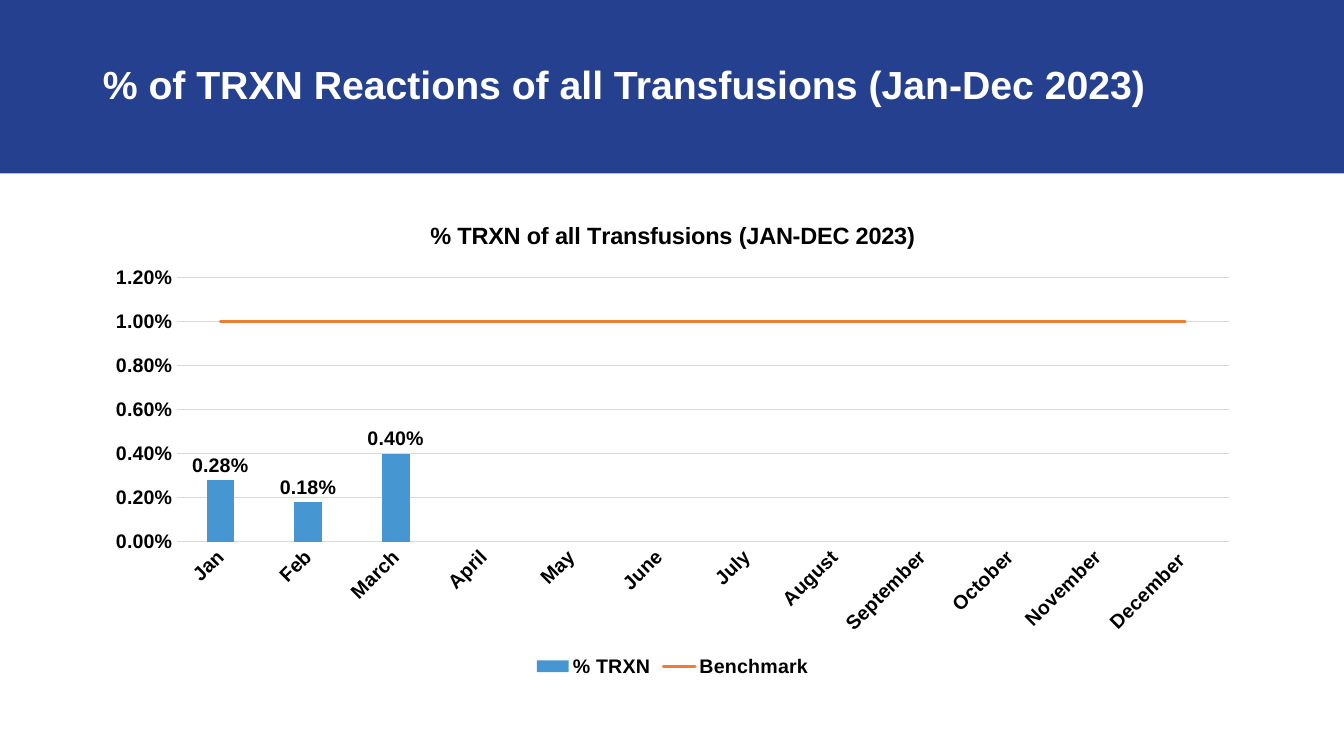
from dataclasses import dataclass

from lxml import etree
from pptx import Presentation
from pptx.chart.data import CategoryChartData
from pptx.dml.color import RGBColor
from pptx.enum.chart import XL_CHART_TYPE, XL_LABEL_POSITION, XL_LEGEND_POSITION, XL_TICK_MARK
from pptx.enum.shapes import MSO_SHAPE
from pptx.enum.text import MSO_ANCHOR, PP_ALIGN
from pptx.oxml import parse_xml
from pptx.oxml.ns import nsdecls, qn
from pptx.util import Inches, Pt

TITLE = "% of TRXN Reactions of all Transfusions (Jan-Dec 2023)"
CHART_TITLE = "% TRXN of all Transfusions (JAN-DEC 2023)"
MONTHS = ["Jan", "Feb", "March", "April", "May", "June", "July", "August",
          "September", "October", "November", "December "]
REACTIONS = [0.0028, 0.0018, 0.004] + [None] * 9
BENCHMARK = [0.01] * len(MONTHS)
PERCENT = "0.00%"

SLIDE_W, SLIDE_H = 13.33, 7.5
BAND_H = 1.72
TITLE_BOX = (0.92, 0.14, 11.5, 1.45)
CHART_BOX = (0.92, 2, 11.5, 4.76)


@dataclass(frozen=True)
class Theme:
    band: RGBColor = RGBColor(0x25, 0x40, 0x8F)
    white: RGBColor = RGBColor(0xFF, 0xFF, 0xFF)
    text: RGBColor = RGBColor(0, 0, 0)
    bar: RGBColor = RGBColor(0x46, 0x96, 0xD2)
    benchmark: RGBColor = RGBColor(0xED, 0x7D, 0x31)
    grid: RGBColor = RGBColor(0xD9, 0xD9, 0xD9)
    font: str = "Arial"
    title_size: float = 28
    chart_title_size: float = 16.8
    chart_size: float = 14


THEME = Theme()


def set_font(font, size, color):
    for name, value in {"name": THEME.font, "size": Pt(size), "bold": True}.items():
        setattr(font, name, value)
    font.color.rgb = color


def set_line(line, color, width):
    line.color.rgb = color
    line.width = Pt(width)


def add_header(slide):
    title = slide.shapes.title
    band = slide.shapes.add_shape(MSO_SHAPE.RECTANGLE, 0, 0, Inches(SLIDE_W), Inches(BAND_H))
    band.shadow.inherit = False
    band.fill.solid()
    band.fill.fore_color.rgb = THEME.band
    band.line.fill.background()
    title._element.addprevious(band._element)

    for side, value in zip(("left", "top", "width", "height"), TITLE_BOX):
        setattr(title, side, Inches(value))
    tf = title.text_frame
    tf.text = TITLE
    tf.word_wrap = True
    tf.vertical_anchor = MSO_ANCHOR.MIDDLE
    p = tf.paragraphs[0]
    p.alignment = PP_ALIGN.LEFT
    p.line_spacing = 0.9
    set_font(p.runs[0].font, THEME.title_size, THEME.white)


def move_to_line_plot(bar_plot, series):
    """Draw one series of a column plot as a line on the same axes."""
    bar_chart, ser = bar_plot._element, series._element
    line_chart = parse_xml(
        f'<c:lineChart {nsdecls("c")}><c:grouping val="standard"/>'
        '<c:varyColors val="0"/><c:marker val="1"/></c:lineChart>')
    marker = parse_xml(f'<c:marker {nsdecls("c")}><c:symbol val="none"/></c:marker>')
    for bar_only in ser.findall(qn("c:invertIfNegative")):
        ser.remove(bar_only)
    ser.find(qn("c:spPr")).addnext(marker)
    etree.SubElement(ser, qn("c:smooth")).set("val", "0")
    ser.find(".//" + qn("a:ln")).set("cap", "rnd")
    line_chart.find(qn("c:marker")).addprevious(ser)
    for axis_id in bar_chart.findall(qn("c:axId")):
        etree.SubElement(line_chart, qn("c:axId")).set("val", axis_id.get("val"))
    bar_chart.addnext(line_chart)


def format_axes(chart):
    cat, val = chart.category_axis, chart.value_axis
    for axis in (cat, val):
        axis.major_tick_mark = axis.minor_tick_mark = XL_TICK_MARK.NONE
        set_font(axis.tick_labels.font, THEME.chart_size, THEME.text)
    set_line(cat.format.line, THEME.grid, 0.75)
    cat._element.find(qn("c:txPr")).find(qn("a:bodyPr")).set("rot", str(-45 * 60000))
    for name, value in {"minimum_scale": 0, "maximum_scale": 0.012, "major_unit": 0.002}.items():
        setattr(val, name, value)
    val.format.line.fill.background()
    set_line(val.major_gridlines.format.line, THEME.grid, 0.75)
    val.tick_labels.number_format = PERCENT
    val.tick_labels.number_format_is_linked = False


def add_reaction_chart(slide):
    data = CategoryChartData(number_format=PERCENT)
    data.categories = MONTHS
    data.add_series("% TRXN", REACTIONS)
    data.add_series("Benchmark", BENCHMARK)
    chart = slide.shapes.add_chart(
        XL_CHART_TYPE.COLUMN_CLUSTERED, *map(Inches, CHART_BOX), data).chart
    set_font(chart.font, THEME.chart_size, THEME.text)

    chart.has_title = True
    tf = chart.chart_title.text_frame
    tf.text = CHART_TITLE
    set_font(tf.paragraphs[0].runs[0].font, THEME.chart_title_size, THEME.text)
    chart.chart_title.include_in_layout = False

    chart.has_legend = True
    chart.legend.position = XL_LEGEND_POSITION.BOTTOM
    chart.legend.include_in_layout = False
    set_font(chart.legend.font, THEME.chart_size, THEME.text)
    format_axes(chart)

    plot = chart.plots[0]
    for name, value in {"gap_width": 219, "overlap": -27, "vary_by_categories": False}.items():
        setattr(plot, name, value)
    reactions, benchmark = plot.series
    reactions.format.fill.solid()
    reactions.format.fill.fore_color.rgb = THEME.bar
    labels = reactions.data_labels
    for name, value in {"show_value": True, "position": XL_LABEL_POSITION.OUTSIDE_END,
                        "number_format": PERCENT, "number_format_is_linked": False}.items():
        setattr(labels, name, value)
    set_font(labels.font, THEME.chart_size, THEME.text)
    set_line(benchmark.format.line, THEME.benchmark, 2.25)
    move_to_line_plot(plot, benchmark)


def main():
    prs = Presentation()
    prs.slide_width, prs.slide_height = Inches(SLIDE_W), Inches(SLIDE_H)
    slide = prs.slides.add_slide(prs.slide_layouts[5])
    add_header(slide)
    add_reaction_chart(slide)
    prs.save("out.pptx")


if __name__ == "__main__":
    main()
